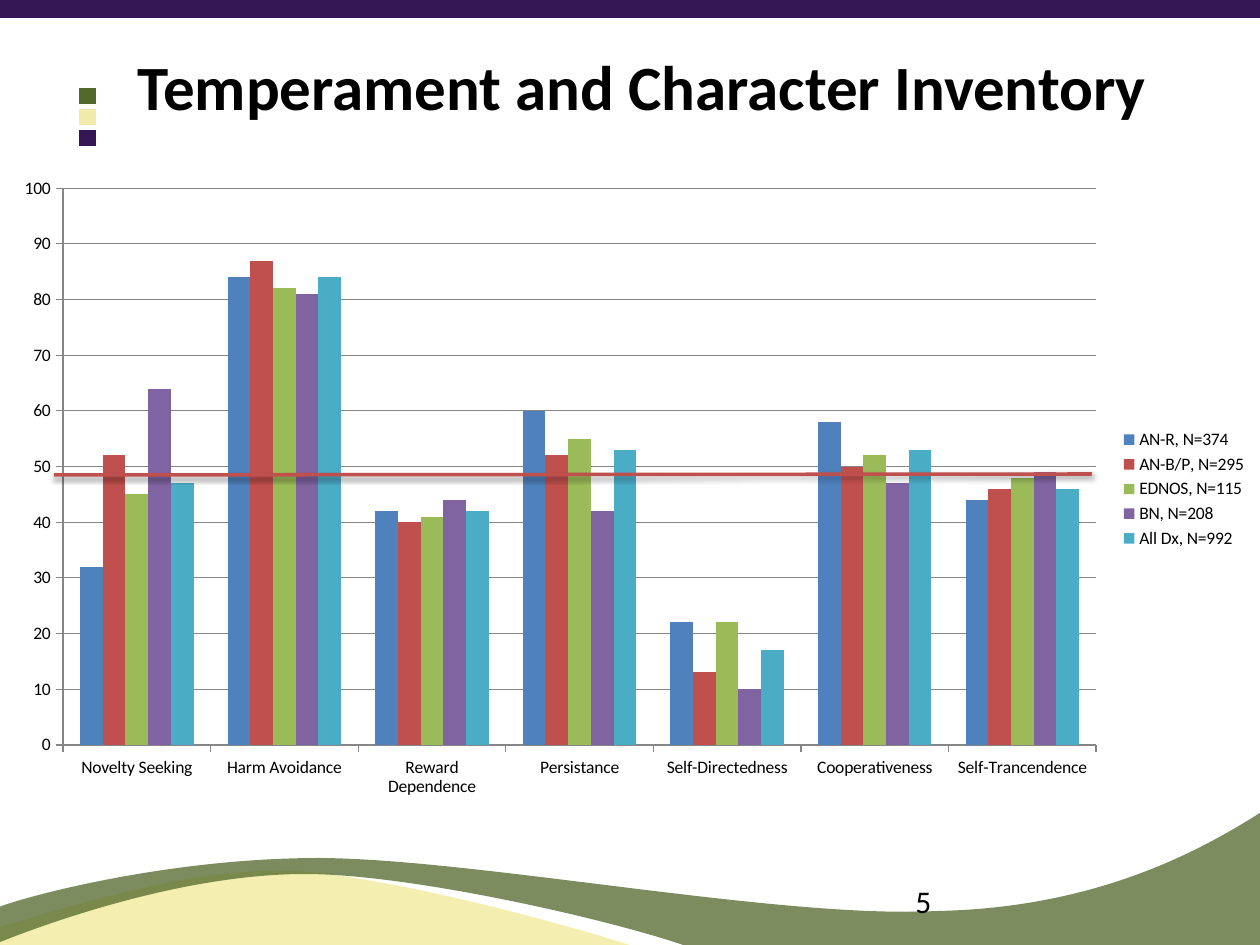
from lxml import etree
from pptx import Presentation
from pptx.chart.data import CategoryChartData
from pptx.dml.color import RGBColor
from pptx.enum.chart import XL_CHART_TYPE, XL_LEGEND_POSITION, XL_TICK_MARK
from pptx.enum.shapes import MSO_CONNECTOR
from pptx.oxml import parse_xml
from pptx.oxml.ns import nsdecls, qn
from pptx.util import Pt

COLUMNS = XL_CHART_TYPE.COLUMN_CLUSTERED
LEGEND_RIGHT = XL_LEGEND_POSITION.RIGHT
TICK_OUTSIDE = XL_TICK_MARK.OUTSIDE
STRAIGHT = MSO_CONNECTOR.STRAIGHT

EMU_PER_PX = 914400 / 126
FONT = "Calibri"

BLACK = RGBColor(0x00, 0x00, 0x00)
GRID_GREY = RGBColor(0x86, 0x86, 0x86)
PURPLE = RGBColor(0x35, 0x17, 0x56)
GREEN = RGBColor(0x53, 0x69, 0x2C)
YELLOW = RGBColor(0xF0, 0xEA, 0xAB)
PALE_YELLOW = RGBColor(0xF4, 0xEF, 0xB1)
RED = RGBColor(0xC0, 0x50, 0x4D)

CATEGORIES = ["Novelty Seeking", "Harm Avoidance", "Reward Dependence", "Persistance",
              "Self-Directedness", "Cooperativeness", "Self-Trancendence"]
SERIES = [
    ("AN-R, N=374", (32, 84, 42, 60, 22, 58, 44), RGBColor(0x4F, 0x81, 0xBD)),
    ("AN-B/P, N=295", (52, 87, 40, 52, 13, 50, 46), RED),
    ("EDNOS, N=115", (45, 82, 41, 55, 22, 52, 48), RGBColor(0x9B, 0xBB, 0x59)),
    ("BN, N=208", (64, 81, 44, 42, 10, 47, 49), RGBColor(0x80, 0x64, 0xA2)),
    ("All Dx, N=992", (47, 84, 42, 53, 17, 53, 46), RGBColor(0x4B, 0xAC, 0xC6)),
]

# Wave outlines in px: a start point, then lines (one point) or curves (three points)
YELLOW_WAVE = [
    [(656, 954)],
    [(618, 939), (401, 876), (291, 871)],
    [(181, 867), (49, 914), (0, 927)],
    [(0, 954)],
]
GREEN_WAVE = [
    [(1261, 954)],
    [(706, 954)],
    [(662, 932), (425, 874), (305, 874)],
    [(185, 874), (53, 921), (0, 942)],
    [(-1, 907)],
    [(21, 898), (164, 858), (320, 858)],
    [(478, 859), (780, 919), (936, 911)],
    [(1099, 908), (1203, 849), (1263, 811)],
]


def px(length):
    return round(length * EMU_PER_PX)


def add_text(slide, text, left, top, width, height, size, bold=False, color=BLACK):
    box = slide.shapes.add_textbox(px(left), px(top), px(width), px(height))
    box.text_frame.word_wrap = True
    paragraph = box.text_frame.paragraphs[0]
    paragraph.text = text
    font = paragraph.font
    font.name, font.size, font.bold = FONT, Pt(size), bold
    font.color.rgb = color


def add_line(slide, start, end, color, weight, square_cap=False, shadow=False):
    line = slide.shapes.add_connector(STRAIGHT, px(start[0]), px(start[1]), px(end[0]), px(end[1]))
    line.line.color.rgb = color
    line.line.width = Pt(weight)
    if square_cap:
        line.line._get_or_add_ln().set("cap", "sq")
    effects = etree.SubElement(line._element.spPr, qn("a:effectLst"))
    if shadow:
        effects.append(parse_xml(
            f'<a:outerShdw {nsdecls("a")} blurRad="{Pt(3.1)}" dist="{Pt(1.6)}" dir="5400000" '
            'rotWithShape="0"><a:srgbClr val="000000"><a:alpha val="38000"/></a:srgbClr>'
            '</a:outerShdw>'))


def add_wave(slide, segments, color, opacity=100):
    points = [point for segment in segments for point in segment]
    builder = slide.shapes.build_freeform(*points[0], scale=EMU_PER_PX)
    builder.add_line_segments(points[1:], close=True)
    wave = builder.convert_to_shape()
    wave.shadow.inherit = False
    wave.fill.solid()
    wave.fill.fore_color.rgb = color
    wave.line.fill.background()
    if opacity < 100:
        color_node = wave._element.spPr.find(".//" + qn("a:srgbClr"))
        etree.SubElement(color_node, qn("a:alpha")).set("val", str(opacity * 1000))
    # Join each run of three points into one cubic curve
    steps = iter(wave._element.spPr.findall(".//" + qn("a:lnTo")))
    for segment in segments[1:]:
        nodes = [next(steps) for _ in segment]
        if len(nodes) == 3:
            curve = etree.Element(qn("a:cubicBezTo"))
            nodes[0].addprevious(curve)
            for node in nodes:
                curve.append(node[0])
                node.getparent().remove(node)


def set_plot_area(chart, x, y, w, h):
    plot_area = chart._chartSpace.chart.plotArea
    for layout in plot_area.findall(qn("c:layout")):
        plot_area.remove(layout)
    sizes = "".join(f'<c:{key} val="{value}"/>' for key, value in zip("xywh", (x, y, w, h)))
    plot_area.insert(0, parse_xml(
        f'<c:layout {nsdecls("c")}><c:manualLayout><c:layoutTarget val="inner"/>'
        f'<c:xMode val="edge"/><c:yMode val="edge"/>{sizes}</c:manualLayout></c:layout>'))


def add_column_chart(slide, left, top, width, height):
    data = CategoryChartData()
    data.categories = CATEGORIES
    for name, values, _ in SERIES:
        data.add_series(name, values)
    chart = slide.shapes.add_chart(COLUMNS, px(left), px(top), px(width), px(height), data).chart
    chart.has_title = False
    chart.font.name, chart.font.size = FONT, Pt(10)
    chart.font.color.rgb = BLACK

    plot = chart.plots[0]
    plot.gap_width, plot.overlap = 150, 0
    plot.vary_by_categories = False
    for series, (_, _, color) in zip(plot.series, SERIES):
        series.format.fill.solid()
        series.format.fill.fore_color.rgb = color

    value_axis = chart.value_axis
    value_axis.minimum_scale, value_axis.maximum_scale, value_axis.major_unit = 0, 100, 10
    value_axis.has_major_gridlines = True
    value_axis.major_gridlines.format.line.color.rgb = GRID_GREY
    for axis in (chart.category_axis, value_axis):
        axis.major_tick_mark = TICK_OUTSIDE
        axis.format.line.color.rgb = GRID_GREY

    chart.has_legend = True
    chart.legend.position = LEGEND_RIGHT
    chart.legend.include_in_layout = False
    set_plot_area(chart, 0.05, 0.03, 0.82, 0.87)


def main():
    presentation = Presentation()
    presentation.slide_width, presentation.slide_height = px(1260), px(945)
    slide = presentation.slides.add_slide(presentation.slide_layouts[6])

    # Background decoration
    add_wave(slide, YELLOW_WAVE, PALE_YELLOW)
    add_line(slide, (6, 9), (1254, 9), PURPLE, 10.5, square_cap=True)
    for row, color in enumerate((GREEN, YELLOW, PURPLE)):
        y = 96 + 21 * row
        add_line(slide, (87, y), (88, y), color, 9, square_cap=True)
    add_wave(slide, GREEN_WAVE, GREEN, opacity=76)

    # Title and slide number
    add_text(slide, "Temperament and Character Inventory", 125, 41, 1135, 157, size=36, bold=True)
    add_text(slide, "5", 903, 876, 294, 50, size=18)

    # Chart and its reference line
    add_column_chart(slide, 0, 169, 1260, 640)
    add_line(slide, (54, 475), (1092, 474), RED, 2, shadow=True)

    presentation.save("out.pptx")


if __name__ == "__main__":
    main()
